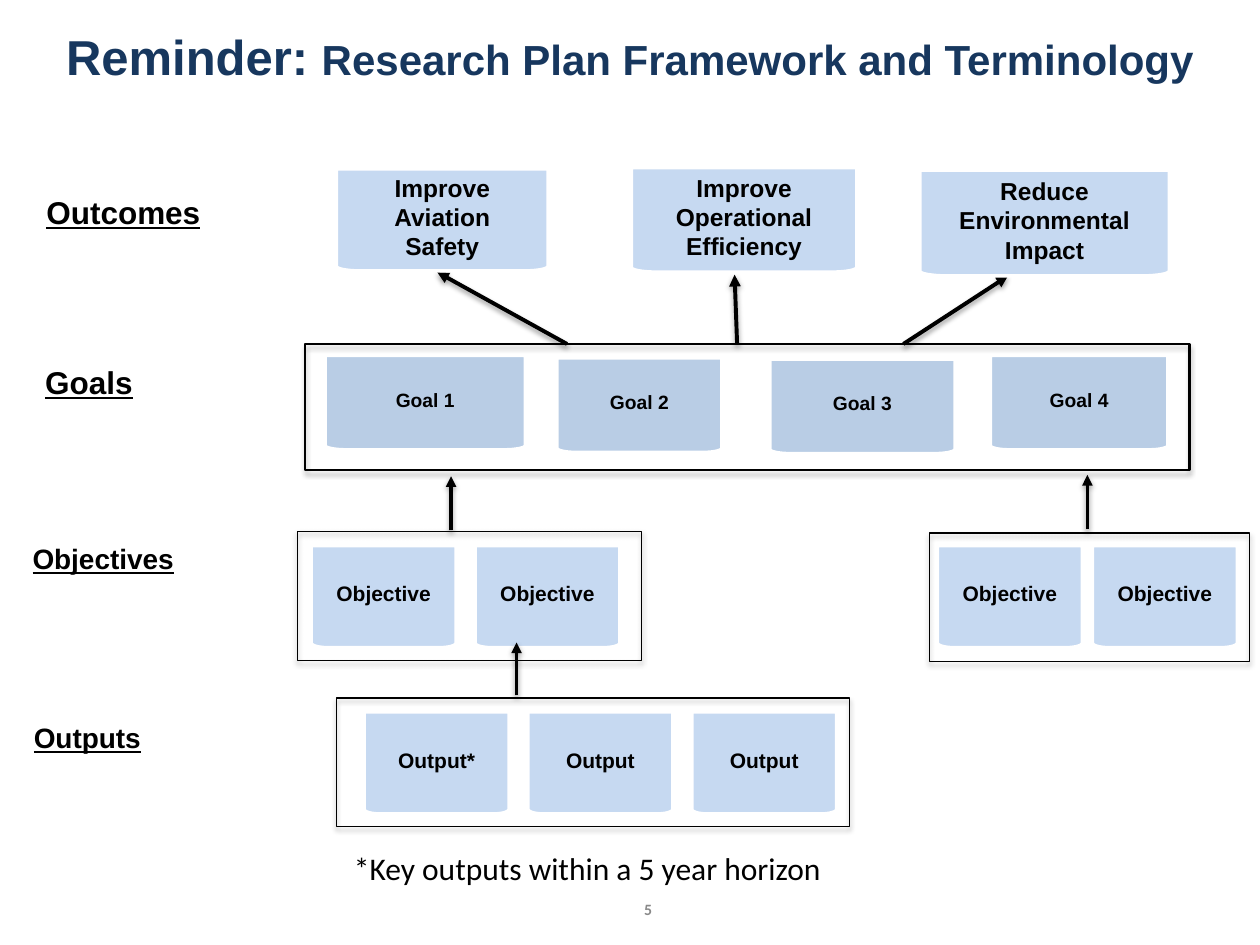
from math import cos, pi, sin

from lxml.etree import SubElement
from pptx import Presentation
from pptx.dml.color import RGBColor
from pptx.enum.shapes import MSO_CONNECTOR as Link, MSO_SHAPE as Shape
from pptx.enum.text import MSO_ANCHOR as Anchor, PP_ALIGN as Align
from pptx.oxml.ns import qn
from pptx.util import Inches, Pt

NAVY = RGBColor(0x17, 0x37, 0x5E)
PALE = RGBColor(0xC6, 0xD9, 0xF1)
BLUE = RGBColor(0xB9, 0xCD, 0xE5)
GRAY = RGBColor(0x89, 0x89, 0x89)
BLACK = RGBColor(0, 0, 0)
WHITE = RGBColor(255, 255, 255)


class Chart:
    """Draws the parts of the framework on one slide."""

    font = "Arial"
    corner = 0.106  # share of the card width taken by each rounded corner
    depth = 0.045   # share of the card height

    def __init__(self, slide):
        self.slide = slide
        self.shapes = slide.shapes

    def style(self, item, size, color=BLACK, bold=True, line=False, name=None):
        font = item.font
        font.name = name or self.font
        font.size = Pt(size)
        font.bold = bold
        font.underline = line
        font.color.rgb = color

    def shade(self, shape, dist, alpha):
        """Give the shape a soft shadow that falls straight down."""
        props = shape._element.spPr
        for old in props.findall(qn("a:effectLst")):
            props.remove(old)
        effects = SubElement(props, qn("a:effectLst"))
        outer = SubElement(effects, qn("a:outerShdw"), blurRad=str(Pt(3.1)),
                           dist=str(Pt(dist)), dir="5400000", rotWithShape="0")
        color = SubElement(outer, qn("a:srgbClr"), val="000000")
        SubElement(color, qn("a:alpha"), val=str(alpha * 1000))

    def title(self, *parts):
        box = self.shapes.title
        box.left, box.top = Inches(0), Inches(0.08)
        box.width, box.height = Inches(10), Inches(0.72)
        frame = box.text_frame
        frame.vertical_anchor = Anchor.MIDDLE
        para = frame.paragraphs[0]
        para.alignment = Align.CENTER
        for text, size in parts:
            run = para.add_run()
            run.text = text
            self.style(run, size, NAVY)

    def label(self, text, x, y, w, h, size, align=Align.LEFT,
              anchor=Anchor.TOP, wrap=True, **look):
        box = self.shapes.add_textbox(Inches(x), Inches(y), Inches(w), Inches(h))
        frame = box.text_frame
        frame.word_wrap = wrap
        frame.vertical_anchor = anchor
        para = frame.paragraphs[0]
        para.text = text
        para.alignment = align
        self.style(para, size, **look)

    def card(self, text, x, y, w, h, size, fill):
        """Add a box with square top corners and flat, rounded bottom ones."""
        rx, ry = w * self.corner, h * self.depth
        turns = [step * pi / 16 for step in range(9)]
        right = [(x + w - rx + rx * cos(t), y + h - ry + ry * sin(t)) for t in turns]
        left = [(x + rx - rx * sin(t), y + h - ry + ry * cos(t)) for t in turns]
        points = [(Inches(a), Inches(b)) for a, b in [(x + w, y)] + right + left]
        path = self.shapes.build_freeform(Inches(x), Inches(y))
        path.add_line_segments(points, close=True)
        shape = path.convert_to_shape()
        shape.shadow.inherit = False
        shape.fill.solid()
        shape.fill.fore_color.rgb = fill
        shape.line.color.rgb = WHITE
        shape.line.width = Pt(2)
        frame = shape.text_frame
        frame.word_wrap = True
        frame.vertical_anchor = Anchor.MIDDLE
        frame.margin_left = frame.margin_right = frame.margin_bottom = Inches(0.16)
        frame.margin_top = Inches(0.11)
        para = frame.paragraphs[0]
        para.text = text
        para.alignment = Align.CENTER
        self.style(para, size)

    def frame(self, x, y, w, h, line=0.75):
        shape = self.shapes.add_shape(
            Shape.RECTANGLE, Inches(x), Inches(y), Inches(w), Inches(h))
        shape.fill.background()
        shape.line.color.rgb = BLACK
        shape.line.width = Pt(line)
        self.shade(shape, 1.8, 35)

    def arrow(self, x1, y1, x2, y2, width=2):
        link = self.shapes.add_connector(
            Link.STRAIGHT, Inches(x1), Inches(y1), Inches(x2), Inches(y2))
        link.line.color.rgb = BLACK
        link.line.width = Pt(width)
        SubElement(link.line._get_or_add_ln(), qn("a:tailEnd"), type="triangle")
        self.shade(link, 1.6, 38)


def main():
    deck = Presentation()
    deck.slide_width, deck.slide_height = Inches(10), Inches(7.5)
    chart = Chart(deck.slides.add_slide(deck.slide_layouts[5]))
    chart.title(("Reminder: ", 28), ("Research Plan Framework and Terminology", 24))

    for text, x, y, w, h, size in [
            ("Outcomes", 0.27, 1.48, 2.27, 0.4, 18),
            ("Goals", 0.26, 2.83, 1.88, 0.4, 18),
            ("Objectives", 0.16, 4.25, 2.09, 0.37, 16),
            ("Outputs", 0.17, 5.67, 2.25, 0.64, 16)]:
        chart.label(text, x, y, w, h, size, line=True)

    for start, end in [((4.5, 2.73), (3.47, 2.16)),
                       ((5.85, 2.73), (5.83, 2.18)),
                       ((7.17, 2.73), (8, 2.19))]:
        chart.arrow(*start, *end, width=2.25)

    for text, x, y, w, h in [
            ("Improve Aviation Safety", 2.67, 1.34, 1.68, 0.81),
            ("Improve Operational Efficiency", 5.01, 1.33, 1.79, 0.83),
            ("Reduce Environmental Impact", 7.3, 1.35, 1.98, 0.84)]:
        chart.card(text, x, y, w, h, 14, PALE)

    goals = [(2.58, 2.82, 1.59), (4.42, 2.84, 1.31),
             (6.11, 2.85, 1.47), (7.86, 2.82, 1.41)]
    for number, (x, y, w) in enumerate(goals, 1):
        chart.card(f"Goal {number}", x, y, w, 0.75, 11, BLUE)

    for x in (2.47, 3.77, 7.44, 8.67):
        chart.card("Objective", x, 4.33, 1.15, 0.81, 12, PALE)
    for col, text in enumerate(["Output*", "Output", "Output"]):
        chart.card(text, 2.89 + 1.3 * col, 5.65, 1.15, 0.81, 12, PALE)

    chart.frame(2.42, 2.73, 7.02, 1, line=1.25)
    chart.frame(2.36, 4.22, 2.73, 1.02)
    chart.frame(7.38, 4.23, 2.54, 1.02)
    chart.frame(2.67, 5.54, 4.07, 1.02)
    for x, low, high in [(3.58, 4.21, 3.78), (8.63, 4.2, 3.77), (4.1, 5.52, 5.1)]:
        chart.arrow(x, low, x, high)

    chart.label("*Key outputs within a 5 year horizon", 2.71, 6.69, 4.08, 0.4, 18,
                wrap=False, bold=False, name="Calibri")
    chart.label("5", 3.98, 7.09, 2.33, 0.26, 9, Align.CENTER, Anchor.MIDDLE,
                color=GRAY, name="Calibri")
    deck.save("out.pptx")


if __name__ == "__main__":
    main()
